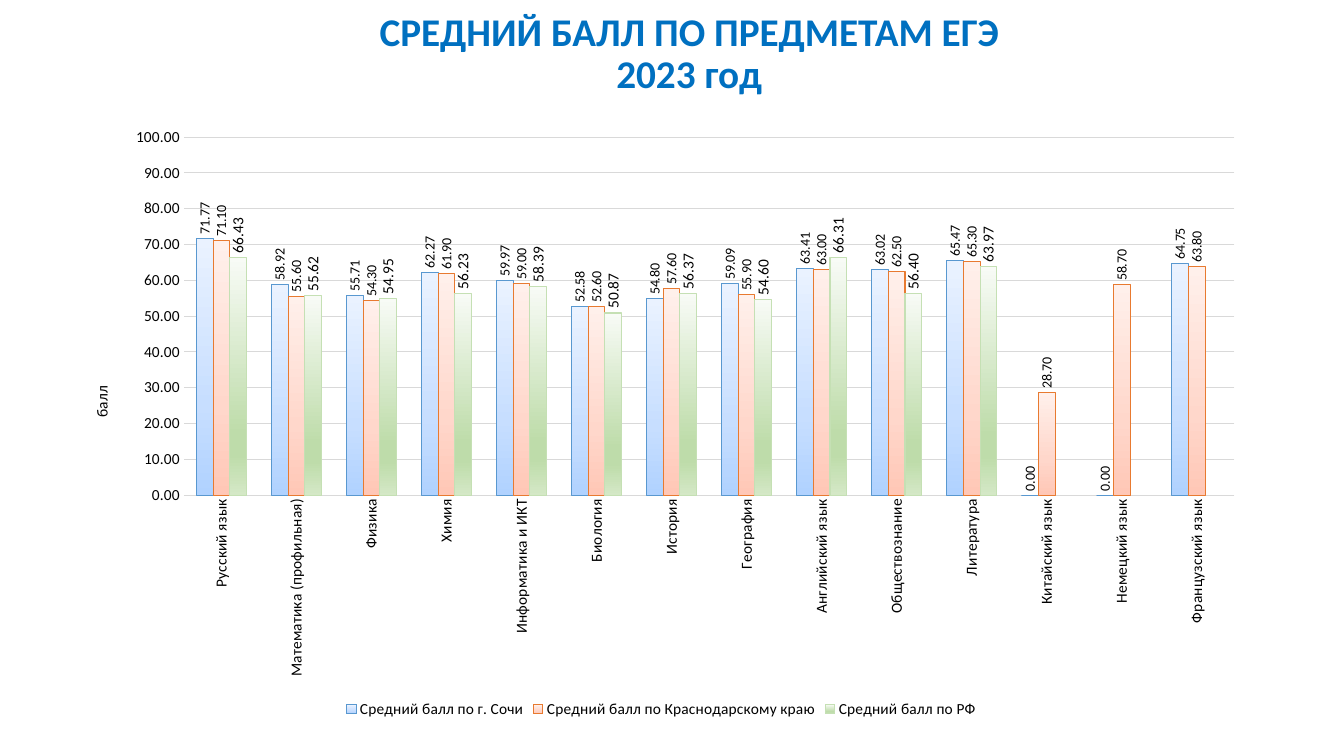
import pptx
import pptx.chart.data
import pptx.dml.color
import pptx.enum.chart
import pptx.enum.text
import pptx.oxml
import pptx.oxml.ns
import pptx.util
from pptx.util import Inches

RGBColor = pptx.dml.color.RGBColor
BLUE = RGBColor(0x00, 0x70, 0xC0)
BLACK = RGBColor(0x00, 0x00, 0x00)
GRID = RGBColor(0xD9, 0xD9, 0xD9)
SOCHI_LINE = RGBColor(0x59, 0x98, 0xD0)
REGION_LINE = RGBColor(0xE8, 0x7A, 0x30)
RUSSIA_LINE = RGBColor(0xC5, 0xE0, 0xB4)
SOCHI_STOPS = [
    (0, RGBColor(0xB0, 0xD2, 0xFF)),
    (35, RGBColor(0xC7, 0xDE, 0xFF)),
    (100, RGBColor(0xEA, 0xF2, 0xFF)),
]
REGION_STOPS = [
    (0, RGBColor(0xFF, 0xC7, 0xB6)),
    (35, RGBColor(0xFF, 0xD7, 0xCB)),
    (100, RGBColor(0xFF, 0xF0, 0xEB)),
]
RUSSIA_STOPS = [
    (0, RGBColor(0xF8, 0xFB, 0xF6)),
    (74, RGBColor(0xBE, 0xDC, 0xAA)),
    (83, RGBColor(0xBE, 0xDC, 0xAA)),
    (100, RGBColor(0xD4, 0xE8, 0xC6)),
]
FONT = "Calibri"
UPRIGHT = "-5400000"

SUBJECTS = [
    "Русский язык", "Математика (профильная)", "Физика", "Химия",
    "Информатика и ИКТ", "Биология", "История", "География",
    "Английский язык", "Обществознание", "Литература",
    "Китайский язык", "Немецкий язык", "Французский язык",
]
SERIES = [
    ("Средний балл по г. Сочи",
     [71.77, 58.92, 55.71, 62.27, 59.97, 52.58, 54.8, 59.09, 63.41, 63.02,
      65.47, 0, 0, 64.75],
     SOCHI_STOPS, 270, SOCHI_LINE, 10),
    ("Средний балл по Краснодарскому краю",
     [71.1, 55.6, 54.3, 61.9, 59, 52.6, 57.6, 55.9, 63, 62.5,
      65.3, 28.7, 58.7, 63.8],
     REGION_STOPS, 270, REGION_LINE, 10),
    ("Средний балл по РФ",
     [66.43, 55.62, 54.95, 56.23, 58.39, 50.87, 56.37, 54.6, 66.31, 56.4,
      63.97, None, None, None],
     RUSSIA_STOPS, 90, RUSSIA_LINE, 11),
]


def set_font(font, size, color=BLACK, bold=False):
    font.name = FONT
    font.size = pptx.util.Pt(size)
    font.color.rgb = color
    font.bold = bold


def set_line(line, color):
    line.color.rgb = color
    line.width = pptx.util.Pt(0.75)


def turn_upright(element):
    body = element.find(".//" + pptx.oxml.ns.qn("a:bodyPr"))
    body.set("rot", UPRIGHT)
    body.set("vert", "horz")


def set_layout(element, index, target="", **fractions):
    for old in element.findall(pptx.oxml.ns.qn("c:layout")):
        element.remove(old)
    sizes = "".join(f'<c:{k} val="{v}"/>' for k, v in fractions.items())
    element.insert(index, pptx.oxml.parse_xml(
        f'<c:layout {pptx.oxml.ns.nsdecls("c")}><c:manualLayout>{target}'
        '<c:xMode val="edge"/><c:yMode val="edge"/>'
        f'{sizes}</c:manualLayout></c:layout>'))


def set_gradient(fmt, stops, angle):
    fmt.fill.gradient()
    grad = fmt.fill._xPr.find(pptx.oxml.ns.qn("a:gradFill"))
    items = "".join(
        f'<a:gs pos="{pos * 1000}"><a:srgbClr val="{color}"/></a:gs>'
        for pos, color in stops)
    new = pptx.oxml.parse_xml(
        f'<a:gradFill {pptx.oxml.ns.nsdecls("a")} rotWithShape="1">'
        f'<a:gsLst>{items}</a:gsLst>'
        f'<a:lin ang="{angle * 60000}" scaled="0"/></a:gradFill>')
    grad.getparent().replace(grad, new)


def add_title(s, text):
    box = s.shapes.add_textbox(Inches(3.53), Inches(0.04), Inches(6.61), Inches(0.97))
    tf = box.text_frame
    tf.word_wrap = True
    tf.vertical_anchor = pptx.enum.text.MSO_ANCHOR.BOTTOM
    p = tf.paragraphs[0]
    p.text = text
    p.alignment = pptx.enum.text.PP_ALIGN.CENTER
    p.line_spacing = 0.9
    set_font(p.font, 28, BLUE, True)


def style_series(series, stops, angle, line, size):
    set_gradient(series.format, stops, angle)
    set_line(series.format.line, line)
    series.invert_if_negative = False
    labels = series.data_labels
    labels.show_value = True
    labels.number_format = "0.00"
    labels.number_format_is_linked = False
    labels.position = pptx.enum.chart.XL_LABEL_POSITION.OUTSIDE_END
    set_font(labels.font, size)
    turn_upright(labels._element)


def style_axes(chart):
    none = pptx.enum.chart.XL_TICK_MARK.NONE
    for axis in (chart.category_axis, chart.value_axis):
        axis.major_tick_mark = none
        axis.minor_tick_mark = none
        set_font(axis.tick_labels.font, 11)
    subjects, scores = chart.category_axis, chart.value_axis
    set_line(subjects.format.line, GRID)
    turn_upright(subjects._element.find(pptx.oxml.ns.qn("c:txPr")))
    scores.format.line.fill.background()
    set_line(scores.major_gridlines.format.line, GRID)
    scores.minimum_scale = 0
    scores.maximum_scale = 100
    scores.major_unit = 10
    scores.tick_labels.number_format = "0.00"
    scores.tick_labels.number_format_is_linked = False
    p = scores.axis_title.text_frame.paragraphs[0]
    p.text = "балл"
    set_font(p.font, 11)
    title = scores.axis_title._element
    turn_upright(title)
    set_layout(title, 1, x=0.02, y=0.44)


def add_scores_chart(s):
    data = pptx.chart.data.CategoryChartData(number_format="0.00")
    data.categories = SUBJECTS
    for name, values, *_ in SERIES:
        data.add_series(name, values)
    chart = s.shapes.add_chart(
        pptx.enum.chart.XL_CHART_TYPE.COLUMN_CLUSTERED,
        Inches(0.64), Inches(1.15), Inches(11.84), Inches(6.02), data).chart
    set_font(chart.font, 11)
    chart.has_title = False
    chart.has_legend = True
    chart.legend.position = pptx.enum.chart.XL_LEGEND_POSITION.BOTTOM
    chart.legend.include_in_layout = False
    set_font(chart.legend.font, 11)
    plot = chart.plots[0]
    plot.gap_width = 150
    plot.overlap = 0
    plot.vary_by_categories = False
    for series, (_, _, *style) in zip(plot.series, SERIES):
        style_series(series, *style)
    style_axes(chart)
    area = chart._chartSpace.find(".//" + pptx.oxml.ns.qn("c:plotArea"))
    set_layout(area, 0, '<c:layoutTarget val="inner"/>', x=0.1, y=0.035, w=0.88, h=0.59)


def main():
    prs = pptx.Presentation()
    prs.slide_width = Inches(13.33)
    prs.slide_height = Inches(7.5)
    s = prs.slides.add_slide(prs.slide_layouts[6])
    add_title(s, "СРЕДНИЙ БАЛЛ ПО ПРЕДМЕТАМ ЕГЭ\v2023 год")
    add_scores_chart(s)
    prs.save("out.pptx")


if __name__ == "__main__":
    main()
